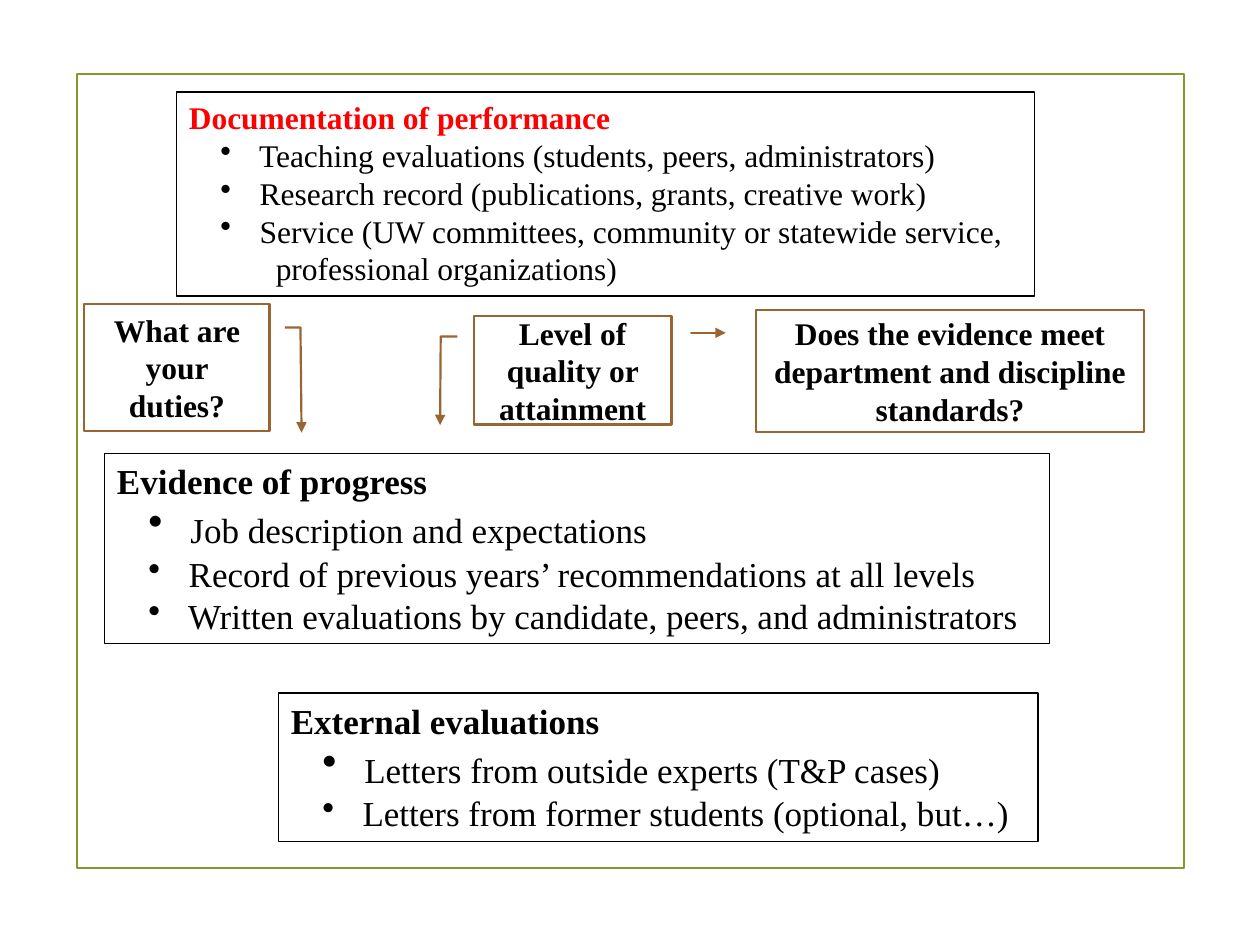
from lxml import etree
from pptx import Presentation
from pptx import util as u
from pptx.dml.color import RGBColor
from pptx.enum import shapes, text
from pptx.oxml import ns

BLACK = RGBColor(0x00, 0x00, 0x00)
WHITE = RGBColor(0xFF, 0xFF, 0xFF)
RED = RGBColor(0xFF, 0x00, 0x00)
GREEN = RGBColor(0x83, 0x99, 0x2A)
BROWN = RGBColor(0x99, 0x66, 0x33)


class SlideBuilder:
    """Draws framed panels and callouts in one style on the current slide."""

    font_name = "Times New Roman"
    bullet_margin = 0.5
    bullet_hang = 0.25

    def __init__(self, presentation):
        self.slide = presentation.slides.add_slide(presentation.slide_layouts[6])

    def outline(self, shape, color, width, fill=WHITE):
        if fill is None:
            shape.fill.background()
        else:
            shape.fill.solid()
            shape.fill.fore_color.rgb = fill
        shape.line.color.rgb = color
        shape.line.width = u.Pt(width)

    def shape(self, kind, box, color, width, fill=WHITE):
        shape = self.slide.shapes.add_shape(kind, *map(u.Inches, box))
        shape.shadow.inherit = False
        self.outline(shape, color, width, fill)
        return shape

    def frame(self, box):
        self.shape(shapes.MSO_SHAPE.RECTANGLE, box, GREEN, 1.25, None)

    def run(self, paragraph, words, size, color=BLACK, bold=False):
        run = paragraph.add_run()
        run.text = words
        values = {"name": self.font_name, "size": u.Pt(size), "bold": bold}
        for name, value in values.items():
            setattr(run.font, name, value)
        run.font.color.rgb = color

    def indent(self, paragraph, margin, hang=0.0):
        paragraph.level = 1
        properties = paragraph._p.get_or_add_pPr()
        properties.set("marL", str(u.Inches(margin)))
        properties.set("indent", str(-u.Inches(hang)))
        if hang:
            etree.SubElement(properties, ns.qn("a:buChar"), char="•")

    def panel(self, box, heading, items, size, color=BLACK, first_space=None, continuation=None):
        shape = self.slide.shapes.add_textbox(*map(u.Inches, box))
        self.outline(shape, BLACK, 0.75)
        frame = shape.text_frame
        frame.word_wrap = True
        self.run(frame.paragraphs[0], heading, size, color, True)
        for index, item in enumerate(items):
            paragraph = frame.add_paragraph()
            self.indent(paragraph, self.bullet_margin, self.bullet_hang)
            if first_space and index == 0:
                self.run(paragraph, " ", first_space)
                self.run(paragraph, item, size)
            else:
                self.run(paragraph, " " + item, size)
        if continuation:
            paragraph = frame.add_paragraph()
            self.indent(paragraph, 0.69)
            self.run(paragraph, continuation, size)

    def callout(self, box, words, tip, flipped=False):
        shape = self.shape(shapes.MSO_SHAPE.LINE_CALLOUT_2, box, BROWN, 1.25)
        for index, value in enumerate((0.188, -0.083, 0.188, -0.167, *tip)):
            shape.adjustments[index] = value
        if flipped:
            shape._element.spPr.find(ns.qn("a:xfrm")).set("flipH", "1")
        etree.SubElement(shape.line._get_or_add_ln(), ns.qn("a:tailEnd"), type="triangle")
        frame = shape.text_frame
        frame.word_wrap = True
        frame.vertical_anchor = text.MSO_ANCHOR.MIDDLE
        paragraph = frame.paragraphs[0]
        paragraph.alignment = text.PP_ALIGN.CENTER
        self.run(paragraph, words, 18, bold=True)


def main():
    presentation = Presentation()
    presentation.slide_width = u.Inches(10)
    presentation.slide_height = u.Inches(7.5)
    builder = SlideBuilder(presentation)
    builder.frame((0.61, 0.59, 8.79, 6.3))
    builder.panel(
        (1.4, 0.73, 6.81, 1.62),
        "Documentation of performance",
        (
            "Teaching evaluations (students, peers, administrators)",
            "Research record (publications, grants, creative work)",
            "Service (UW committees, community or statewide service,",
        ),
        18,
        color=RED,
        continuation="professional organizations)",
    )
    builder.panel(
        (0.83, 3.6, 7.5, 1.51),
        "Evidence of progress",
        (
            "Job description and expectations",
            "Record of previous years’ recommendations at all levels",
            "Written evaluations by candidate, peers, and administrators",
        ),
        20,
        first_space=24,
    )
    builder.panel(
        (2.21, 5.5, 6.03, 1.18),
        "External evaluations",
        (
            "Letters from outside experts (T&P cases)",
            "Letters from former students (optional, but…)",
        ),
        20,
        first_space=24,
    )
    builder.callout(
        (6, 2.46, 3.08, 0.97),
        "Does the evidence meet department and discipline standards?",
        (0.188, -0.078),
    )
    builder.callout((0.67, 2.41, 1.47, 1.01), "What are your duties?", (1.014, -0.173), True)
    builder.callout((3.76, 2.51, 1.57, 0.86), "Level of quality or attainment", (1.006, -0.17))
    presentation.save("out.pptx")


if __name__ == "__main__":
    main()
